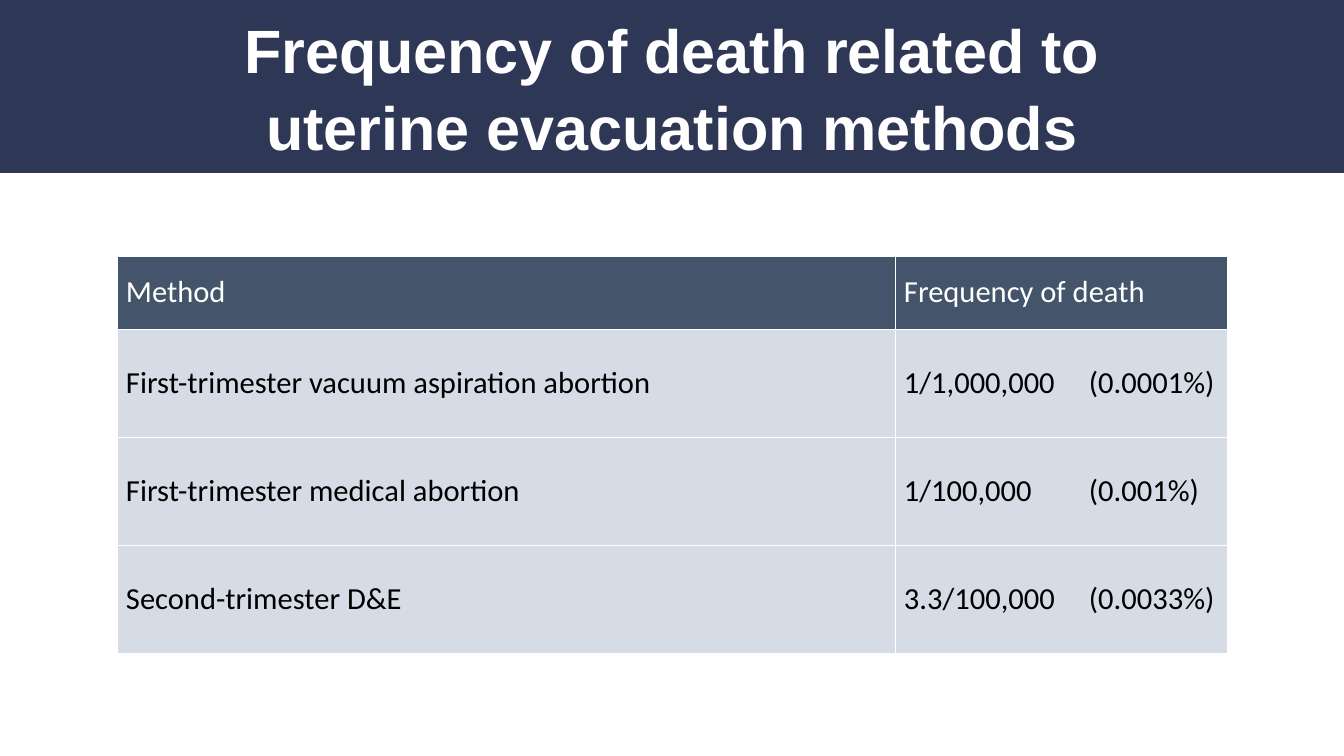
from lxml import etree
from pptx import Presentation
from pptx import util as u
from pptx.dml.color import RGBColor
from pptx.enum import shapes, text
from pptx.oxml.ns import qn

PX = 14961  # EMU per px
WHITE = RGBColor(0xFF, 0xFF, 0xFF)
BLACK = RGBColor(0, 0, 0)
NAVY = RGBColor(0x2E, 0x38, 0x56)
SLATE = RGBColor(0x44, 0x54, 0x6A)
PALE = RGBColor(0xD6, 0xDC, 0xE5)

COLUMN_WIDTHS = (778, 332)
ROW_HEIGHTS = (73, 108, 108, 108)
PERCENT_TAB = 185
CELL_MARGIN = 9
DEATH_RATES = (
    ("Method", "Frequency of death"),
    ("First-trimester vacuum aspiration abortion", "1/1,000,000\t(0.0001%)"),
    ("First-trimester medical abortion", "1/100,000\t(0.001%)"),
    ("Second-trimester D&E", "3.3/100,000\t(0.0033%)"),
)


def px(*lengths):
    return [u.Emu(length * PX) for length in lengths]


def style_font(paragraph, name, size, color, bold=False):
    font = paragraph.font
    font.name, font.size, font.bold = name, u.Pt(size), bold
    font.color.rgb = color


def add_banner(slide):
    banner = slide.shapes.add_shape(shapes.MSO_SHAPE.RECTANGLE, *px(0, 0, 1344, 173))
    banner.shadow.inherit = False
    banner.fill.solid()
    banner.fill.fore_color.rgb = NAVY
    banner.line.fill.background()


def add_title(slide, wording):
    frame = slide.shapes.add_textbox(*px(183, 12, 978, 148)).text_frame
    frame.word_wrap = True
    frame.vertical_anchor = text.MSO_ANCHOR.MIDDLE
    frame.margin_left = frame.margin_right = frame.margin_top = frame.margin_bottom = 0
    title = frame.paragraphs[0]
    title.text = wording
    title.alignment = text.PP_ALIGN.CENTER
    title.line_spacing = 1.04
    style_font(title, "Arial", 72, WHITE, bold=True)


def add_borders(cell):
    """Put a thin white line on each side, ahead of the cell's fill."""
    properties = cell._tc.get_or_add_tcPr()
    for index, side in enumerate(("a:lnL", "a:lnR", "a:lnT", "a:lnB")):
        border = etree.Element(qn(side), w=str(u.Pt(1)))
        fill = etree.SubElement(border, qn("a:solidFill"))
        etree.SubElement(fill, qn("a:srgbClr"), val=str(WHITE))
        properties.insert(index, border)


def add_tab_stop(paragraph, position):
    stops = etree.SubElement(paragraph._p.get_or_add_pPr(), qn("a:tabLst"))
    etree.SubElement(stops, qn("a:tab"), pos=str(px(position)[0]), algn="l")


def fill_cell(cell, wording, background, color):
    cell.fill.solid()
    cell.fill.fore_color.rgb = background
    cell.vertical_anchor = text.MSO_ANCHOR.MIDDLE
    cell.margin_left = cell.margin_right = px(CELL_MARGIN)[0]
    cell.margin_top = cell.margin_bottom = 0
    add_borders(cell)
    paragraph = cell.text_frame.paragraphs[0]
    paragraph.text = wording
    if "\t" in wording:
        add_tab_stop(paragraph, PERCENT_TAB)
    style_font(paragraph, "Calibri", 36, color)


def add_rate_table(slide):
    table = slide.shapes.add_table(
        len(DEATH_RATES), len(COLUMN_WIDTHS),
        *px(117, 256, sum(COLUMN_WIDTHS), sum(ROW_HEIGHTS))).table
    for column, width in zip(table.columns, px(*COLUMN_WIDTHS)):
        column.width = width
    for index, (row, height) in enumerate(zip(table.rows, px(*ROW_HEIGHTS))):
        row.height = height
        background, color = (PALE, BLACK) if index else (SLATE, WHITE)
        for cell, wording in zip(row.cells, DEATH_RATES[index]):
            fill_cell(cell, wording, background, color)


def main():
    presentation = Presentation()
    presentation.slide_width, presentation.slide_height = px(1344, 756)
    slide = presentation.slides.add_slide(presentation.slide_layouts[6])
    add_banner(slide)
    add_title(slide, "Frequency of death related to uterine evacuation methods")
    add_rate_table(slide)
    presentation.save("out.pptx")


if __name__ == "__main__":
    main()
